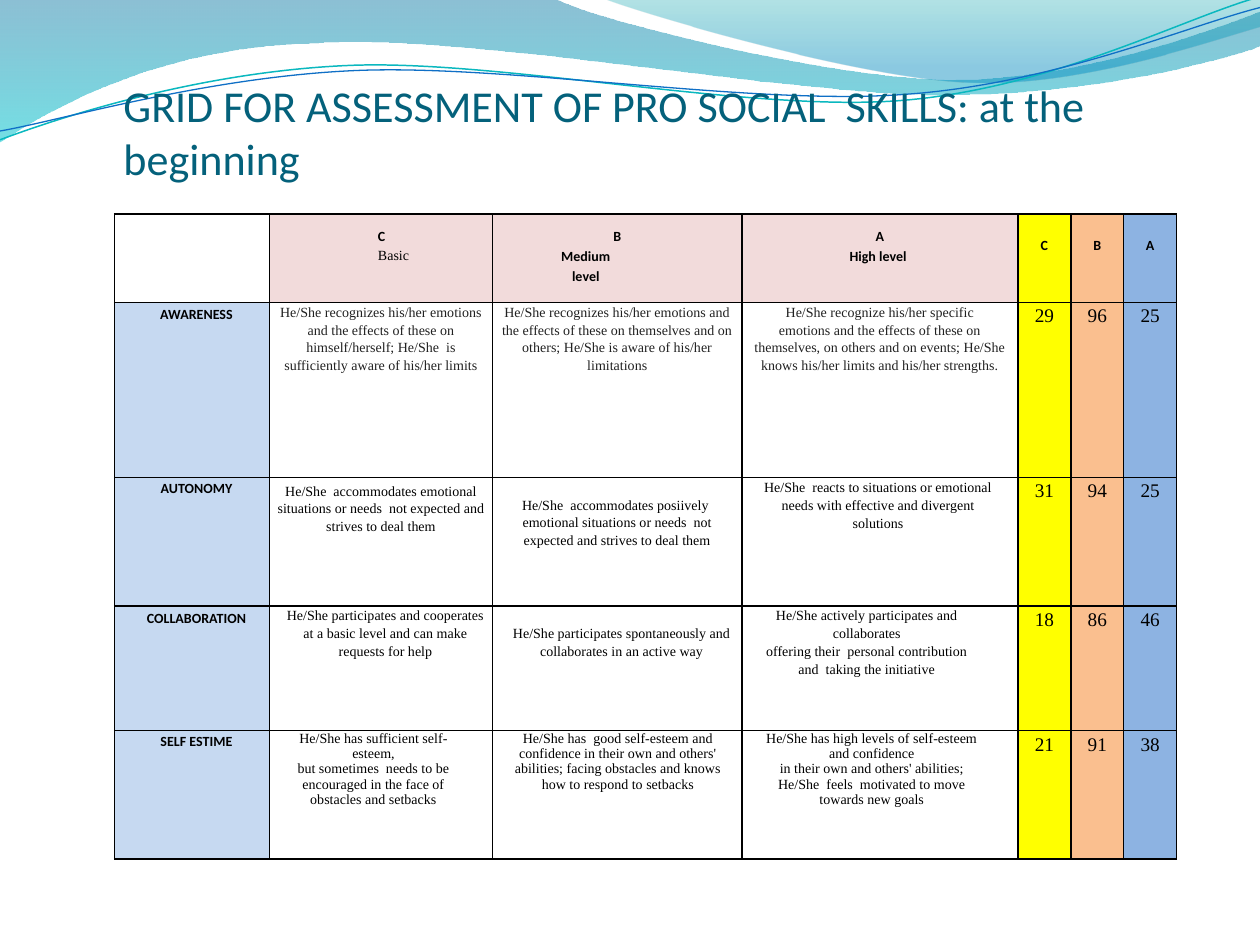
import pptx
import pptx.dml.color
import pptx.enum.text
import pptx.oxml
import pptx.oxml.ns
import pptx.util

WIDTH, HEIGHT = 10, 7.5
UNITS = 1000
ALIGN = pptx.enum.text.PP_ALIGN
SERIF, SANS = "Times New Roman", "Calibri"
COLUMNS = [1.23, 1.77, 1.98, 2.19, 0.42, 0.42, 0.42]
ROWS = [0.7, 1.39, 1.02, 0.99, 1.02]
LABEL_FILL, LEVEL_FILL = "C6D9F1", "F2DBDB"
SCORE_FILLS = {"C": "FFFF00", "B": "FABF8F", "A": "8DB3E2"}
EXACT = pptx.util.Pt(12.1)

WAVES = [
    ((0, 0), [(4.4, -0.01), (4.76, 0.17, 6.64, 0.63, 7.58, 0.63),
              (8.53, 0.63, 9.58, 0.26, 10, 0.09), (10.01, 0.36),
              (9.83, 0.44, 8.7, 0.76, 7.46, 0.75),
              (6.22, 0.75, 3.82, 0.28, 2.57, 0.34),
              (1.29, 0.36, 0.46, 0.83, -0.01, 1.13), (0, 0)],
     [(0, "0074A1", 45), (100, "00C6CF", 55)]),
    ((4.79, -0.01), [(5.09, 0.11, 6.82, 0.62, 7.69, 0.65),
                     (8.56, 0.69, 9.61, 0.32, 10, 0.21), (10, 0), (4.79, -0.01)],
     [(0, "00A1A9", 30), (80, "008BBF", 45)]),
]
RIPPLES = [
    ((0, 1.11), [(0.48, 0.93, 1.58, 0.57, 2.77, 0.52),
                 (3.95, 0.47, 5.93, 0.89, 7.13, 0.8),
                 (8.33, 0.71, 9.38, 0.15, 9.98, -0.02)], "0AB8BF", 0.85),
    ((0, 1.04), [(0.47, 0.96, 1.64, 0.61, 2.83, 0.56),
                 (4.03, 0.51, 5.97, 0.84, 7.17, 0.75),
                 (8.36, 0.67, 9.41, 0.21, 10, 0.06)], "0F6FC6", 0.75),
]

SKILLS = [
    ("AWARENESS", EXACT, dict(left=0, color="212121"), [
        (["He/She recognizes his/her emotions",
          "and the effects of these on himself/herself; He/She  is sufficiently aware of his/her limits"], {}),
        (["He/She recognizes his/her emotions and",
          "the effects of these on themselves and on others; He/She is aware of his/her limitations"], {}),
        (["He/She recognize his/her specific",
          "emotions and the effects of these on themselves, on others and on events; "
          "He/She knows his/her limits and his/her strengths."], {})], (29, 96, 25)),
    ("AUTONOMY", 1.15, {}, [
        (["He/She  accommodates emotional situations or needs  not expected and strives to deal them"],
         dict(left=0, top=0.03)),
        (["He/She  accommodates posiively  emotional situations or needs  not expected and strives to deal them"],
         dict(left=0, top=0.14)),
        (["He/She  reacts to situations or emotional needs with effective and divergent solutions"],
         dict(right=0.1))], (31, 94, 25)),
    ("COLLABORATION", EXACT, {}, [
        (["He/She participates and cooperates at a basic level and can make requests for help"], {}),
        (["He/She participates spontaneously and", "collaborates in an active way"], dict(top=0.14)),
        (["He/She actively participates and collaborates",
          "offering their  personal contribution and  taking the initiative"], dict(right=0.28))], (18, 86, 46)),
    ("SELF ESTIME", 1.15, dict(spacing=0.99), [
        (["He/She has sufficient self-esteem,",
          "but sometimes  needs to be encouraged in the face of obstacles and setbacks"], dict(right=0.19)),
        (["He/She has  good self-esteem and",
          "confidence in their own and others' abilities; facing obstacles and knows how to respond to setbacks"],
         dict(right=0.06)),
        (["He/She has high levels of self-esteem and confidence",
          "in their own and others' abilities; He/She  feels  motivated to move towards new goals"],
         dict(right=0.2))], (21, 91, 38)),
]


def rgb(value):
    """Turn a hex string into a colour."""
    return pptx.dml.color.RGBColor.from_string(value)


def write(paragraph, text, size=8, font=SERIF, bold=False, color="000000",
          align=ALIGN.CENTER, left=0, right=0, indent=0, spacing=1.15):
    """Fill a paragraph with formatted text."""
    run = paragraph.add_run()
    run.text = text
    run.font.size, run.font.name, run.font.bold = pptx.util.Pt(size), font, bold
    run.font.color.rgb = rgb(color)
    paragraph.alignment, paragraph.line_spacing = align, spacing
    properties = paragraph._p.get_or_add_pPr()
    for name, inches in (("marL", left), ("marR", right), ("indent", indent)):
        properties.set(name, str(int(pptx.util.Inches(inches))))


def drawing(xml):
    """Parse one element of the drawing namespace."""
    return pptx.oxml.parse_xml(xml.replace(">", f" {pptx.oxml.ns.nsdecls('a')}>", 1))


def dress_cell(cell, fill=None, top=0):
    """Give a cell its fill, margins and black borders."""
    if fill:
        cell.fill.solid()
        cell.fill.fore_color.rgb = rgb(fill)
    else:
        cell.fill.background()
    cell.margin_left = cell.margin_right = pptx.util.Inches(0.06)
    cell.margin_top, cell.margin_bottom = pptx.util.Inches(top), 0
    for position, side in enumerate("LRTB"):
        cell._tc.get_or_add_tcPr().insert(position, drawing(
            f'<a:ln{side} w="12700"><a:solidFill><a:srgbClr val="000000"/></a:solidFill></a:ln{side}>'))


def fill_cell(cell, lines, fill=None, top=0, **style):
    """Write one paragraph per line into a dressed cell."""
    dress_cell(cell, fill, top)
    frame = cell.text_frame
    for number, line in enumerate(lines):
        write(frame.add_paragraph() if number else frame.paragraphs[0], line, **style)


def add_curve(slide, start, segments, close):
    """Add an outline of straight and cubic segments, without fill or shadow."""
    anchors = [start] + [segment[-2:] for segment in segments]
    left, top = map(min, zip(*anchors))
    scaled = [(round(x * UNITS), round(y * UNITS)) for x, y in anchors]
    builder = slide.shapes.build_freeform(*scaled[0], scale=pptx.util.Inches(1) / UNITS)
    builder.add_line_segments(scaled[1:], close=close)
    curve = builder.convert_to_shape()
    sides = list(curve.element.iter(pptx.oxml.ns.qn("a:lnTo")))
    for side, segment in zip(sides, segments):
        if len(segment) == 6:
            points = "".join(f'<a:pt x="{round((x - left) * UNITS)}" y="{round((y - top) * UNITS)}"/>'
                             for x, y in zip(segment[::2], segment[1::2]))
            side.getparent().replace(side, drawing(f"<a:cubicBezTo>{points}</a:cubicBezTo>"))
    curve.shadow.inherit = False
    curve.fill.background()
    return curve


def add_wave(slide, start, segments, stops):
    """Add a translucent gradient wave."""
    wave = add_curve(slide, start, segments, True)
    wave.line.fill.background()
    marks = "".join(f'<a:gs pos="{place * 1000}"><a:srgbClr val="{color}"><a:alpha val="{alpha * 1000}"/>'
                    "</a:srgbClr></a:gs>" for place, color, alpha in stops)
    blank = wave.element.spPr.find(pptx.oxml.ns.qn("a:noFill"))
    wave.element.spPr.replace(blank, drawing(
        f'<a:gradFill><a:gsLst>{marks}</a:gsLst><a:lin ang="5400000" scaled="0"/></a:gradFill>'))


def add_ripple(slide, start, segments, color, weight):
    """Add a thin curved line."""
    ripple = add_curve(slide, start, segments, False)
    ripple.line.color.rgb, ripple.line.width = rgb(color), pptx.util.Pt(weight)
    return ripple


def place_title(slide, text):
    """Move the title placeholder and write the heading."""
    title = slide.shapes.title
    title.left, title.top, title.width, title.height = map(pptx.util.Inches, (0.98, 0.52, 7.84, 0.94))
    frame = title.text_frame
    frame.word_wrap, frame.auto_size = True, pptx.enum.text.MSO_AUTO_SIZE.NONE
    frame.vertical_anchor = pptx.enum.text.MSO_ANCHOR.BOTTOM
    frame.margin_left = frame.margin_right = frame.margin_bottom = 0
    write(frame.paragraphs[0], text, size=25.2, font=SANS, color="04617B", align=ALIGN.LEFT, spacing=1.0)
    return title


def fill_header(grid):
    """Write the level names and score letters."""
    heading = dict(font=SANS, bold=True)
    dress_cell(grid.cell(0, 0))
    basic, medium, high = (grid.cell(0, column) for column in (1, 2, 3))
    fill_cell(basic, ["C"], LEVEL_FILL, 0.09, align=ALIGN.LEFT, left=0.5, indent=0.3, **heading)
    write(basic.text_frame.add_paragraph(), "Basic", align=ALIGN.JUSTIFY, left=0.5, indent=0.3)
    for cell, letter, name, side, left, right in (
            (medium, "B", "Medium level", 0.87, 0.38, 0.88), (high, "A", "High level", 0.96, 0.54, 0.57)):
        fill_cell(cell, [letter], LEVEL_FILL, 0.09, left=side, right=side, **heading)
        write(cell.text_frame.add_paragraph(), name, left=left, right=right, **heading)
    for column, (letter, fill) in enumerate(SCORE_FILLS.items(), 4):
        fill_cell(grid.cell(0, column), [letter], fill, 0.16, **heading)


def add_grid(slide):
    """Add the assessment table."""
    area = map(pptx.util.Inches, (0.91, 1.7, sum(COLUMNS), sum(ROWS)))
    grid = slide.shapes.add_table(len(ROWS), len(COLUMNS), *area).table
    grid.first_row = grid.horz_banding = False
    for column, width in zip(grid.columns, COLUMNS):
        column.width = pptx.util.Inches(width)
    for row, height in zip(grid.rows, ROWS):
        row.height = pptx.util.Inches(height)
    fill_header(grid)
    for row, (skill, spacing, shared, levels, scores) in enumerate(SKILLS, 1):
        fill_cell(grid.cell(row, 0), [skill], LABEL_FILL, font=SANS, bold=True, left=0.07, spacing=spacing)
        for column, (lines, style) in enumerate(levels, 1):
            fill_cell(grid.cell(row, column), lines, **{"left": 0.07, **shared, **style})
        for column, (score, fill) in enumerate(zip(scores, SCORE_FILLS.values()), 4):
            fill_cell(grid.cell(row, column), [str(score)], fill, size=11)


def main():
    """Build and save the slide."""
    deck = pptx.Presentation()
    deck.slide_width, deck.slide_height = pptx.util.Inches(WIDTH), pptx.util.Inches(HEIGHT)
    slide = deck.slides.add_slide(deck.slide_layouts[5])
    for wave in WAVES:
        add_wave(slide, *wave)
    ripples = [add_ripple(slide, *ripple) for ripple in RIPPLES]
    title = place_title(slide, "GRID FOR ASSESSMENT OF PRO SOCIAL  SKILLS: at the beginning")
    ripples[-1].element.addnext(title.element)
    add_grid(slide)
    deck.save("out.pptx")


if __name__ == "__main__":
    main()
